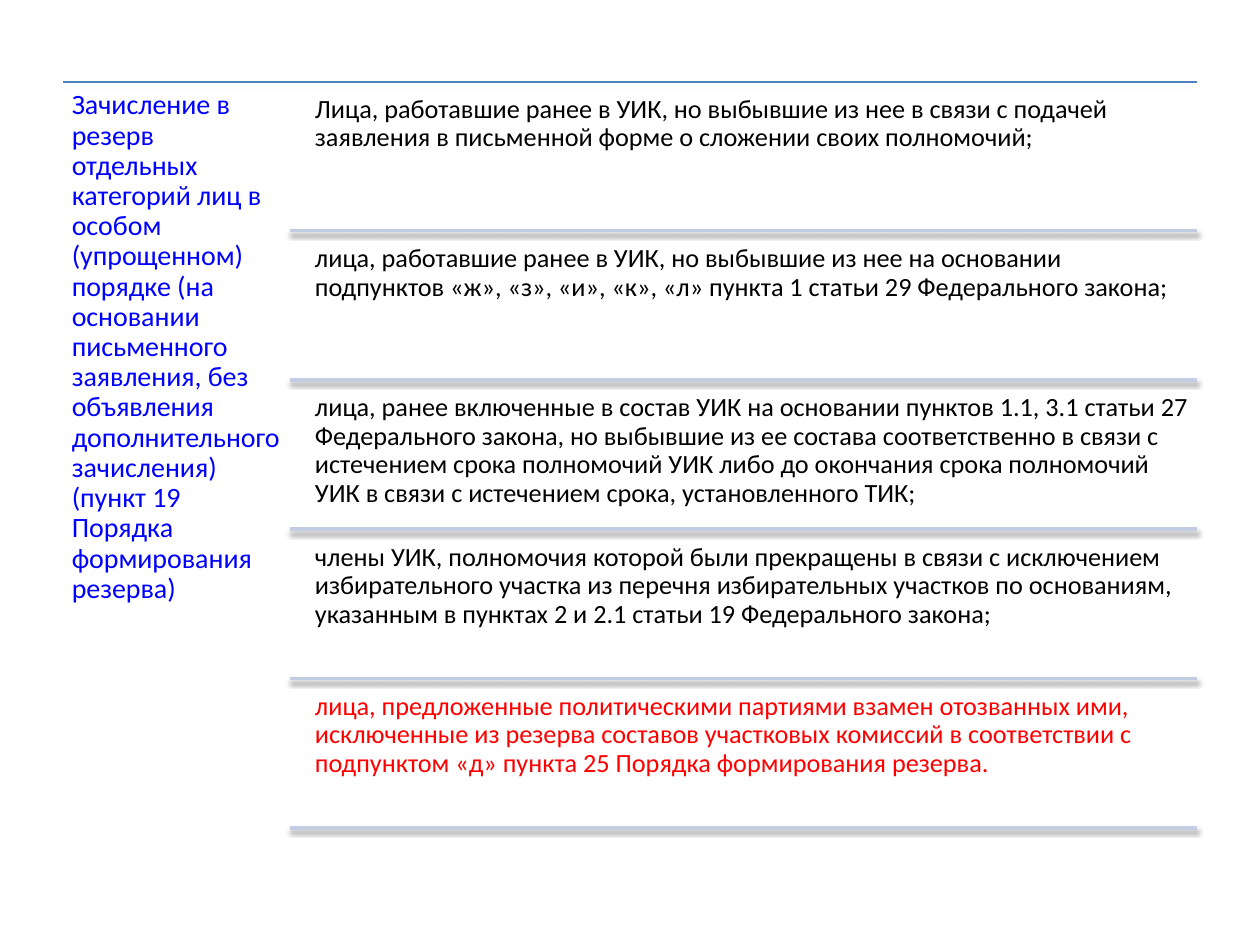
import pptx
import pptx.dml.color
import pptx.enum.shapes
import pptx.oxml
import pptx.oxml.ns
import pptx.util

Inches = pptx.util.Inches
Pt = pptx.util.Pt
RGBColor = pptx.dml.color.RGBColor

BLUE = RGBColor(0x00, 0x00, 0xFF)
BLACK = RGBColor(0x00, 0x00, 0x00)
RED = RGBColor(0xFF, 0x00, 0x00)
RULE_BLUE = RGBColor(0x4F, 0x81, 0xBD)
RULE_PALE = RGBColor(0xC2, 0xCD, 0xE1)

LEFT, RIGHT, TOP = 0.5, 9.5, 0.65
HEADING_WIDTH = 1.8
ROW_LEFT, ROW_TOP, ROW_WIDTH, ROW_HEIGHT = 2.44, 0.7, 7.07, 1.13
ROW_PITCH = (5.44 - ROW_TOP) / 4

HEADING = (
    "Зачисление в резерв отдельных категорий лиц в особом (упрощенном) порядке "
    "(на основании письменного заявления, без объявления дополнительного "
    "зачисления) (пункт 19 Порядка формирования резерва)"
)
CATEGORIES = [
    ("Лица, работавшие ранее в УИК, но выбывшие из нее в связи с подачей "
     "заявления в письменной форме о сложении своих полномочий;", BLACK),
    ("лица, работавшие ранее в УИК, но выбывшие из нее на основании подпунктов "
     "«ж», «з», «и», «к», «л» пункта 1 статьи 29 Федерального закона;", BLACK),
    ("лица, ранее включенные в состав УИК на основании пунктов 1.1, 3.1 статьи 27 "
     "Федерального закона, но выбывшие из ее состава соответственно в связи с "
     "истечением срока полномочий УИК либо до окончания срока полномочий УИК "
     "в связи с истечением срока, установленного ТИК;", BLACK),
    ("члены УИК, полномочия которой были прекращены в связи с исключением "
     "избирательного участка из перечня избирательных участков по основаниям, "
     "указанным в пунктах 2 и 2.1 статьи 19 Федерального закона;", BLACK),
    ("лица, предложенные политическими партиями взамен отозванных ими, "
     "исключенные из резерва составов участковых комиссий в соответствии с "
     "подпунктом «д» пункта 25 Порядка формирования резерва.", RED),
]


class SlideBuilder:
    font_name = "Calibri"
    line_spacing = 0.9
    space_after_share = 0.35
    shadow_blur = 3.1

    def __init__(self, slide):
        self.slide = slide

    def add_text(self, text, left, top, width, height, size, color, inset):
        box = self.slide.shapes.add_textbox(
            Inches(left), Inches(top), Inches(width), Inches(height))
        frame = box.text_frame
        paragraph = frame.paragraphs[0]
        run = paragraph.add_run()
        run.text = text
        run.font.color.rgb = color
        margins = ("margin_left", "margin_top", "margin_right", "margin_bottom")
        formats = [
            (frame, {"word_wrap": True, **dict.fromkeys(margins, Inches(inset))}),
            (paragraph, {"line_spacing": self.line_spacing,
                         "space_after": Pt(size * self.space_after_share)}),
            (run.font, {"name": self.font_name, "size": Pt(size)}),
        ]
        for target, values in formats:
            for name, value in values.items():
                setattr(target, name, value)

    def add_rule(self, left, right, y, color, weight, shadow_distance, shadow_opacity):
        """Draw a horizontal line with a soft shadow below it."""
        rule = self.slide.shapes.add_connector(
            pptx.enum.shapes.MSO_CONNECTOR.STRAIGHT,
            Inches(left), Inches(y), Inches(right), Inches(y))
        rule.line.color.rgb = color
        rule.line.width = Pt(weight)
        rule._element.spPr.append(pptx.oxml.parse_xml(
            f'<a:effectLst {pptx.oxml.ns.nsdecls("a")}>'
            f'<a:outerShdw blurRad="{Pt(self.shadow_blur)}" dist="{Pt(shadow_distance)}" '
            f'dir="5400000" rotWithShape="0"><a:srgbClr val="000000">'
            f'<a:alpha val="{shadow_opacity * 1000}"/></a:srgbClr></a:outerShdw>'
            f'</a:effectLst>'))


def main():
    presentation = pptx.Presentation()
    presentation.slide_width = Inches(10)
    presentation.slide_height = Inches(7.5)
    builder = SlideBuilder(presentation.slides.add_slide(presentation.slide_layouts[6]))

    builder.add_rule(LEFT, RIGHT, TOP, RULE_BLUE, 0.75, 1.8, 35)
    builder.add_text(HEADING, LEFT, TOP, HEADING_WIDTH, 5.98, 16, BLUE, 0.07)
    for index, (text, color) in enumerate(CATEGORIES):
        top = ROW_TOP + index * ROW_PITCH
        builder.add_text(text, ROW_LEFT, top, ROW_WIDTH, ROW_HEIGHT, 15, color, 0.06)
        builder.add_rule(LEFT + HEADING_WIDTH, RIGHT, top + ROW_HEIGHT,
                         RULE_PALE, 2, 1.6, 38)

    presentation.save("out.pptx")


if __name__ == "__main__":
    main()
